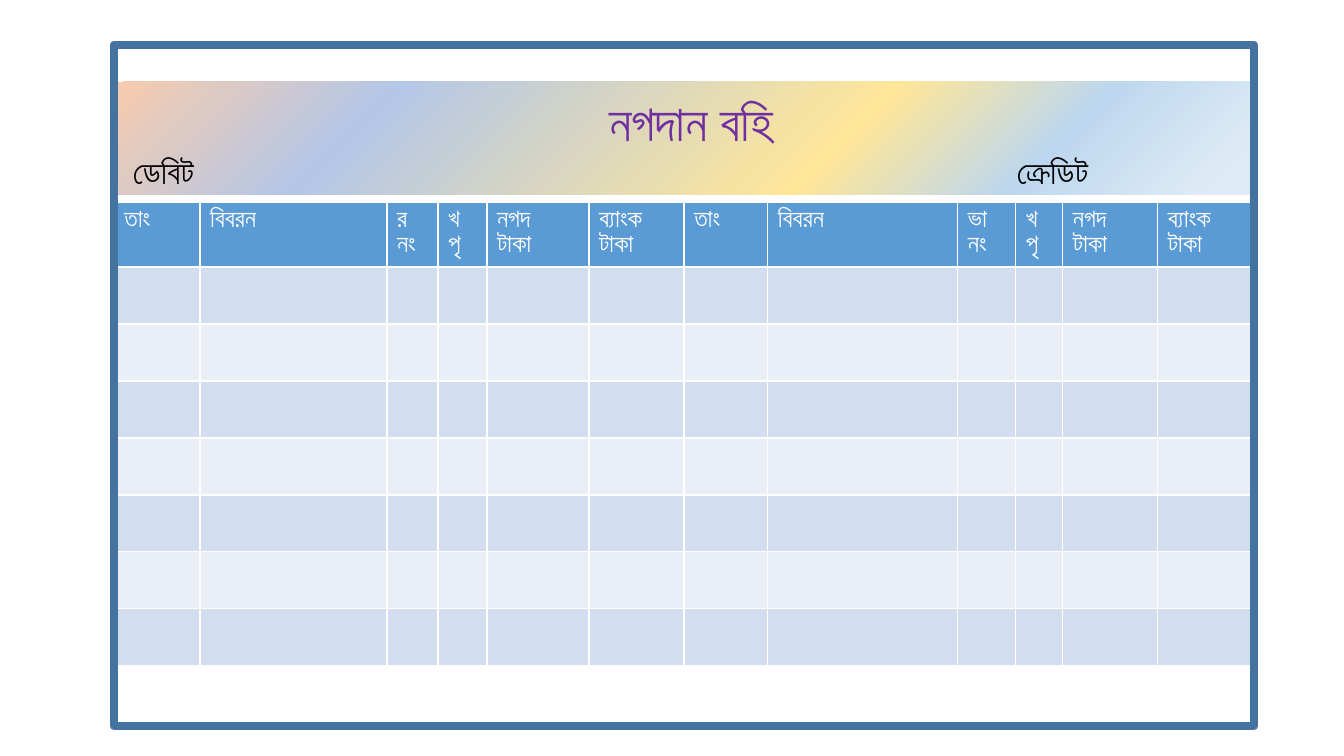
from dataclasses import dataclass

from pptx import Presentation
from pptx.dml.color import RGBColor
from pptx.enum.shapes import MSO_SHAPE
from pptx.enum.text import MSO_ANCHOR, PP_ALIGN
from pptx.oxml import parse_xml
from pptx.oxml.ns import nsdecls
from pptx.util import Pt

SCALE = 914400 / 100.8


@dataclass(frozen=True)
class Theme:
    font: str = "Lato"
    alt: str = "Calibri"
    head: str = "5B9BD5"
    bands: tuple = ("D2DEEF", "EAEFF7")
    white: str = "FFFFFF"
    ink: str = "000000"
    title: str = "7030A0"
    frame: str = "43739E"
    glow: tuple = ((4, "DEEBF7"), (20, "BDD7EE"), (37, "FFE699"),
                   (77, "B4C7E7"), (100, "F8CBAD"))
    big: int = 36
    mid: int = 24
    small: int = 18
    edge: int = 6


THEME = Theme()
COLS = [("তাং", 86), ("বিবরন", 187), ("র\nনং", 51), ("খ\nপৃ", 49),
        ("নগদ\nটাকা", 102), ("ব্যাংক\nটাকা", 95), ("তাং", 84), ("বিবরন", 190),
        ("ভা\nনং", 58), ("খ\nপৃ", 47), ("নগদ\nটাকা", 95), ("ব্যাংক\nটাকা", 96)]


def px(*nums):
    return [round(n * SCALE) for n in nums]


def style(para, size, color, font=THEME.font):
    para.font.size = Pt(size)
    para.font.name = font
    para.font.color.rgb = RGBColor.from_string(color)


def write(shape, text, size, color, align):
    frame = shape.text_frame
    frame.word_wrap = True
    frame.vertical_anchor = MSO_ANCHOR.MIDDLE
    frame.margin_left = frame.margin_right = 0
    frame.margin_top = frame.margin_bottom = 0
    frame.text = text
    para = frame.paragraphs[0]
    para.alignment = align
    style(para, size, color)


def add_rect(slide, box):
    rect = slide.shapes.add_shape(MSO_SHAPE.RECTANGLE, *px(*box))
    rect.shadow.inherit = False
    rect.fill.background()
    rect.line.fill.background()
    return rect


def add_glow(shape):
    stops = "".join(f'<a:gs pos="{pos * 1000}"><a:srgbClr val="{color}"/></a:gs>'
                    for pos, color in THEME.glow)
    grad = parse_xml(
        f'<a:gradFill {nsdecls("a")} rotWithShape="1"><a:gsLst>{stops}</a:gsLst>'
        '<a:path path="circle"><a:fillToRect l="100000" t="100000"/></a:path>'
        '<a:tileRect r="-100000" b="-100000"/></a:gradFill>')
    old = shape._element.spPr.find("{*}noFill")
    old.getparent().replace(old, grad)


def add_band(slide, box):
    left, top, width, height = box
    band = add_rect(slide, box)
    add_glow(band)

    # Title, raised above the band
    title = slide.shapes.title
    title.left, title.top, title.width, title.height = px(
        left, top + 5, width + 14, 68)
    write(title, "নগদান বহি", THEME.big, THEME.title, PP_ALIGN.CENTER)
    band._element.addnext(title._element)

    # Side labels
    for text, shift in (("ডেবিট", 19), ("ক্রেডিট", 903)):
        label = slide.shapes.add_textbox(
            *px(left + shift, top + 65, 140, height - 65))
        write(label, text, THEME.mid, THEME.ink, PP_ALIGN.LEFT)


def add_ledger(slide, box, count=7, row=57):
    left, top, width, height = box
    table = slide.shapes.add_table(
        count + 1, len(COLS), *px(left, top, width, height)).table

    # Row heights and fills
    for i, line in enumerate(table.rows):
        line.height = px(row if i else height - count * row)[0]
        color = THEME.bands[(i - 1) % 2] if i else THEME.head
        for cell in line.cells:
            cell.fill.solid()
            cell.fill.fore_color.rgb = RGBColor.from_string(color)

    # Column widths and headings
    for i, (text, wide) in enumerate(COLS):
        table.columns[i].width = px(wide)[0]
        cell = table.cell(0, i)
        cell.text = text
        font = THEME.alt if text.startswith("ভা") else THEME.font
        for para in cell.text_frame.paragraphs:
            style(para, THEME.small, THEME.white, font)


def add_frame(slide, box):
    frame = add_rect(slide, box)
    frame.line.color.rgb = RGBColor.from_string(THEME.frame)
    frame.line.width = Pt(THEME.edge)


def main():
    deck = Presentation()
    deck.slide_width, deck.slide_height = px(1344, 756)
    slide = deck.slides.add_slide(deck.slide_layouts[5])
    add_ledger(slide, (114, 202, 1140, 464))
    add_band(slide, (114, 82, 1140, 113))
    add_frame(slide, (114, 45, 1140, 681))
    deck.save("out.pptx")


if __name__ == "__main__":
    main()
